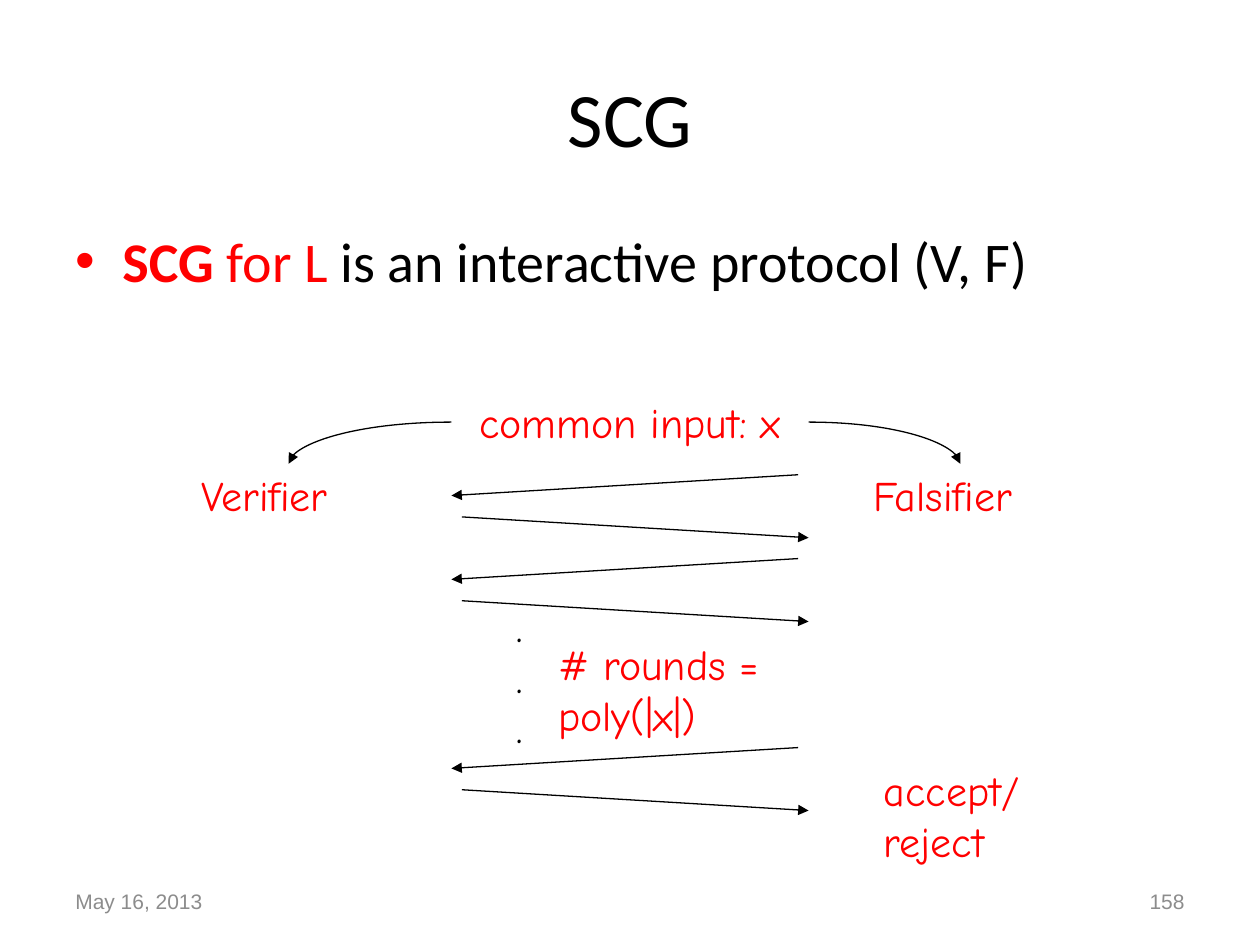
from lxml import etree
from pptx import Presentation
from pptx.dml.color import RGBColor
from pptx.enum import shapes, text
from pptx.oxml import ns
from pptx.util import Cm, Pt

HUES = {"ink": "000000", "red": "FF0000", "grey": "8C8C8C"}
LEFT, MID, RIGHT = text.PP_ALIGN.LEFT, text.PP_ALIGN.CENTER, text.PP_ALIGN.RIGHT
HAND = "Comic Neue"


def hue(name):
    """Return the named colour."""
    return RGBColor.from_string(HUES[name])


def place(shape, box):
    """Set left, top, width and height in centimetres."""
    shape.left, shape.top, shape.width, shape.height = map(Cm, box)


def add_run(para, words, face, size, tint, bold=False):
    """Append one formatted run."""
    run = para.add_run()
    run.text = words
    font = run.font
    font.name, font.size, font.bold = face, Pt(size), bold
    font.color.rgb = hue(tint)


def add_text(slide, box, runs, face=HAND, size=24, align=LEFT, anchor=text.MSO_ANCHOR.TOP):
    """Add a wrapped text box and return its paragraph."""
    shape = slide.shapes.add_textbox(*map(Cm, box))
    frame = shape.text_frame
    frame.word_wrap = True
    frame.vertical_anchor = anchor
    para = frame.paragraphs[0]
    para.alignment = align
    for words, tint, bold in runs:
        add_run(para, words, face, size, tint, bold)
    return para


def add_bullet(para):
    """Give a paragraph a hanging bullet."""
    props = para._p.get_or_add_pPr()
    props.set("marL", str(Cm(0.95)))
    props.set("indent", str(-Cm(0.95)))
    font = etree.SubElement(props, ns.qn("a:buFont"))
    font.set("typeface", "Arial")
    etree.SubElement(props, ns.qn("a:buChar")).set("char", "•")


def add_arrow(slide, start, end, curved=False):
    """Add a straight or curved arrow."""
    kind = shapes.MSO_CONNECTOR.CURVE if curved else shapes.MSO_CONNECTOR.STRAIGHT
    link = slide.shapes.add_connector(kind, *map(Cm, start + end))
    link.line.color.rgb = hue("ink")
    link.line.width = Pt(0.75)
    props = link._element.spPr
    if curved:
        props.find(ns.qn("a:prstGeom")).set("prst", "curvedConnector2")
    tail = etree.SubElement(link.line._get_or_add_ln(), ns.qn("a:tailEnd"))
    tail.set("type", "triangle")
    etree.SubElement(props, ns.qn("a:effectLst"))


def add_round(slide, top):
    """Add a message to the verifier and its reply."""
    add_arrow(slide, (16.09, top), (9.1, top + 0.42))
    add_arrow(slide, (9.31, top + 0.85), (16.3, top + 1.27))


def add_title(slide, words):
    """Fill the title placeholder."""
    title = slide.shapes.title
    place(title, (1.27, 0.76, 22.86, 3.18))
    title.text_frame.vertical_anchor = text.MSO_ANCHOR.MIDDLE
    para = title.text_frame.paragraphs[0]
    para.alignment = MID
    add_run(para, words, "Calibri", 44, "ink")


def main():
    """Build and save the slide."""
    deck = Presentation()
    deck.slide_width, deck.slide_height = Cm(25.4), Cm(19.05)
    slide = deck.slides.add_slide(deck.slide_layouts[5])
    add_title(slide, "SCG")
    body = add_text(
        slide, (1.27, 4.45, 22.86, 12.57),
        [("SCG ", "red", True), ("for L", "red", False),
         (" is an interactive protocol (V, F)", "ink", False)],
        "Calibri", 32)
    add_bullet(body)
    for left, words, align in ((1.27, "May 16, 2013", LEFT), (18.21, "158", RIGHT)):
        add_text(slide, (left, 17.65, 5.92, 1.02), [(words, "grey", False)],
                 "Arial", 12, align, text.MSO_ANCHOR.MIDDLE)
    for top in (9.57, 11.26, 15.07):
        add_round(slide, top)
    for end, start in ((5.82, 9.1), (19.36, 16.3)):
        add_arrow(slide, (start, 8.51), (end, 9.35), True)
    labels = (
        ((3.81, 9.35, 4.01, 1.27), "Verifier", "red", LEFT),
        ((17.35, 9.35, 4.01, 1.27), "Falsifier", "red", LEFT),
        ((10.16, 11.99, 0.84, 3.33), ". . .", "ink", LEFT),
        ((9.1, 7.87, 7.2, 1.27), "common input: x", "red", MID),
        ((17.57, 15.29, 3.81, 2.31), "accept/reject", "red", LEFT),
        ((11, 12.75, 5.08, 2.31), "# rounds = poly(|x|)", "red", LEFT),
    )
    for box, words, tint, align in labels:
        add_text(slide, box, [(words, tint, False)], align=align)
    deck.save("out.pptx")


if __name__ == "__main__":
    main()
